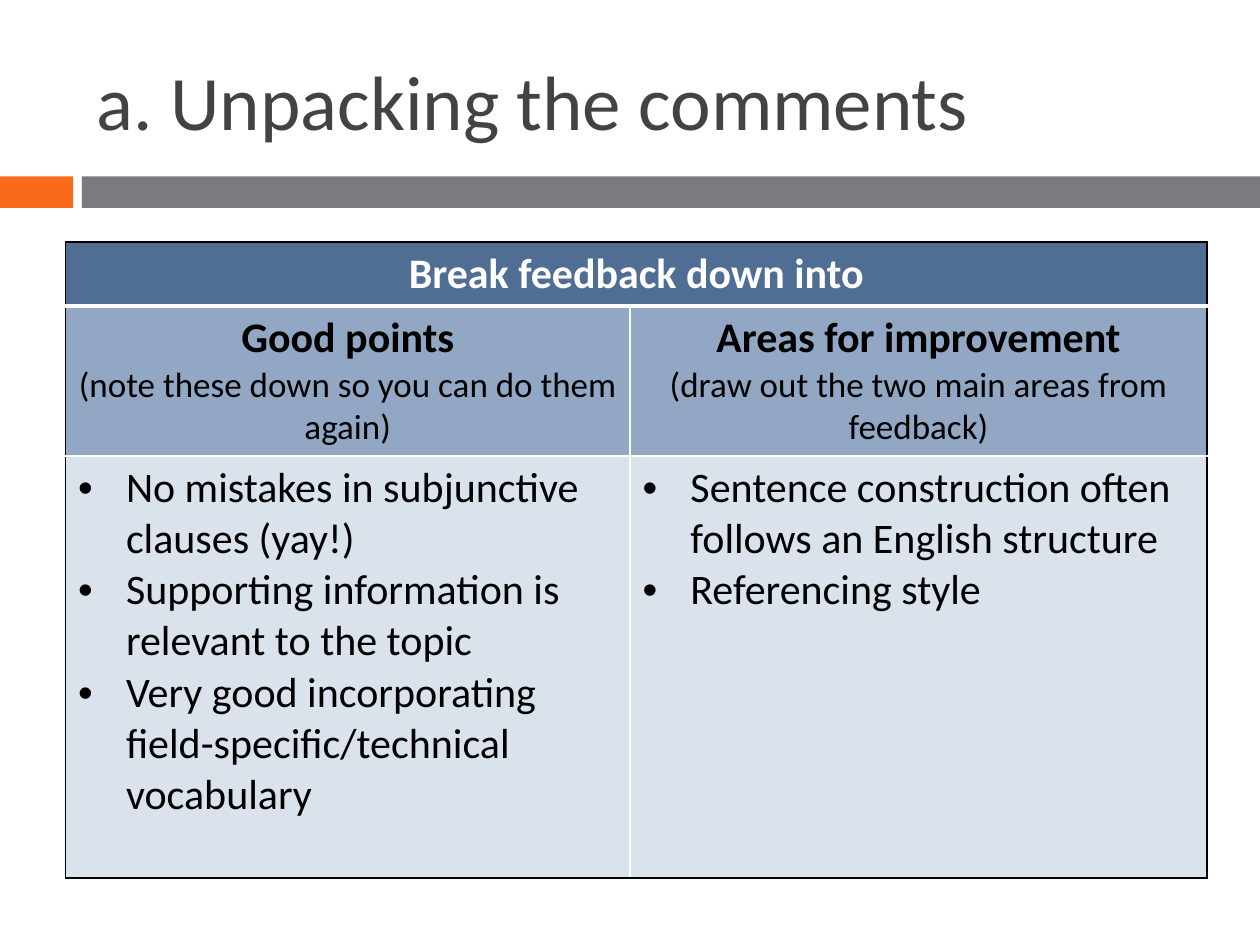
from pptx import Presentation
from pptx.dml.color import RGBColor
from pptx.enum.shapes import MSO_SHAPE as Shape
from pptx.enum.text import MSO_ANCHOR as Anchor, PP_ALIGN as Align
from pptx.oxml.ns import qn
from pptx.util import Inches, Pt
from lxml.etree import SubElement

FONT = "Calibri"
COLORS = {
    "orange": "F96A1B", "gray": "797B7E", "title": "434342",
    "header": "506E94", "subheader": "91A7C4", "body": "DAE2EB",
    "black": "000000", "white": "FFFFFF",
}
COLUMNS = [
    ("Good points", "(note these down so you can do them again)",
     ["No mistakes in subjunctive clauses (yay!)",
      "Supporting information is relevant to the topic",
      "Very good incorporating field-specific/technical vocabulary"]),
    ("Areas for improvement", "(draw out the two main areas from feedback)",
     ["Sentence construction often follows an English structure",
      "Referencing style"]),
]


def color(name):
    """Return the named palette color."""
    return RGBColor.from_string(COLORS[name])


def write_lines(text_frame, lines, font_color, align=Align.LEFT):
    """Write (text, size, bold) lines as paragraphs and return them."""
    for index, (text, size, bold) in enumerate(lines):
        paragraph = text_frame.paragraphs[0] if index == 0 else text_frame.add_paragraph()
        paragraph.text = text
        paragraph.alignment = align
        font = paragraph.font
        font.name, font.size, font.bold = FONT, Pt(size), bold
        font.color.rgb = color(font_color)
    return text_frame.paragraphs


def add_bullet(paragraph):
    """Give a paragraph a hanging bullet."""
    properties = paragraph._p.get_or_add_pPr()
    properties.set("marL", str(Inches(0.38)))
    properties.set("indent", str(-Inches(0.38)))
    SubElement(properties, qn("a:buFont"), typeface="Arial")
    SubElement(properties, qn("a:buChar"), char="•")


def style_cell(cell, fill, borders):
    """Set the (color, width) borders in left, right, top, bottom order, then the fill."""
    properties = cell._tc.get_or_add_tcPr()
    for side, (name, width) in zip("LRTB", borders):
        line = SubElement(properties, qn(f"a:ln{side}"), w=str(Pt(width)))
        solid = SubElement(line, qn("a:solidFill"))
        SubElement(solid, qn("a:srgbClr"), val=COLORS[name])
    cell.fill.solid()
    cell.fill.fore_color.rgb = color(fill)


def add_title(slide, left, top, width, height):
    """Add the slide title."""
    text_frame = slide.shapes.add_textbox(left, top, width, height).text_frame
    text_frame.word_wrap = True
    text_frame.vertical_anchor = Anchor.MIDDLE
    write_lines(text_frame, [("a. Unpacking the comments", 44, False)], "title")


def add_band(slide, left, top, width, height):
    """Add the divider: a short orange block, a gap and a gray bar."""
    bar_left = left + Inches(0.65)
    for name, start, end in (("orange", left, left + Inches(0.58)),
                             ("gray", bar_left, left + width)):
        shape = slide.shapes.add_shape(Shape.RECTANGLE, start, top, end - start, height)
        shape.shadow.inherit = False
        shape.fill.solid()
        shape.fill.fore_color.rgb = color(name)
        shape.line.fill.background()


def add_feedback_table(slide, left, top, width, height):
    """Add the table that splits feedback into good points and improvements."""
    table = slide.shapes.add_table(3, 2, left, top, width, height).table
    table.columns[0].width = Inches(4.48)
    table.columns[1].width = width - Inches(4.48)
    header_height, subheader_height = Inches(0.51), Inches(1.19)
    row_heights = (header_height, subheader_height, height - header_height - subheader_height)
    for row, row_height in zip(table.rows, row_heights):
        row.height = row_height

    outer, inner, rule = ("black", 1), ("white", 1), ("white", 3)
    header = table.cell(0, 0)
    header.merge(table.cell(0, 1))
    write_lines(header.text_frame, [("Break feedback down into", 24, True)],
                "white", Align.CENTER)
    for column, (heading, note, points) in enumerate(COLUMNS):
        sides = (outer, inner) if column == 0 else (inner, outer)
        style_cell(table.cell(0, column), "header", (outer, outer, outer, rule))
        subheader, body = table.cell(1, column), table.cell(2, column)
        style_cell(subheader, "subheader", (*sides, rule, inner))
        write_lines(subheader.text_frame, [(heading, 24, True), (note, 20, False)],
                    "black", Align.CENTER)
        style_cell(body, "body", (*sides, inner, outer))
        for paragraph in write_lines(body.text_frame,
                                     [(point, 24, False) for point in points], "black"):
            add_bullet(paragraph)


def main():
    """Build and save the slide."""
    presentation = Presentation()
    presentation.slide_width, presentation.slide_height = Inches(10), Inches(7.5)
    slide = presentation.slides.add_slide(presentation.slide_layouts[6])
    add_band(slide, Inches(0), Inches(1.4), Inches(10), Inches(0.25))
    add_title(slide, Inches(0.67), Inches(0.25), Inches(8.92), Inches(1.08))
    add_feedback_table(slide, Inches(0.52), Inches(1.92), Inches(9.06), Inches(5.05))
    presentation.save("out.pptx")


if __name__ == "__main__":
    main()
